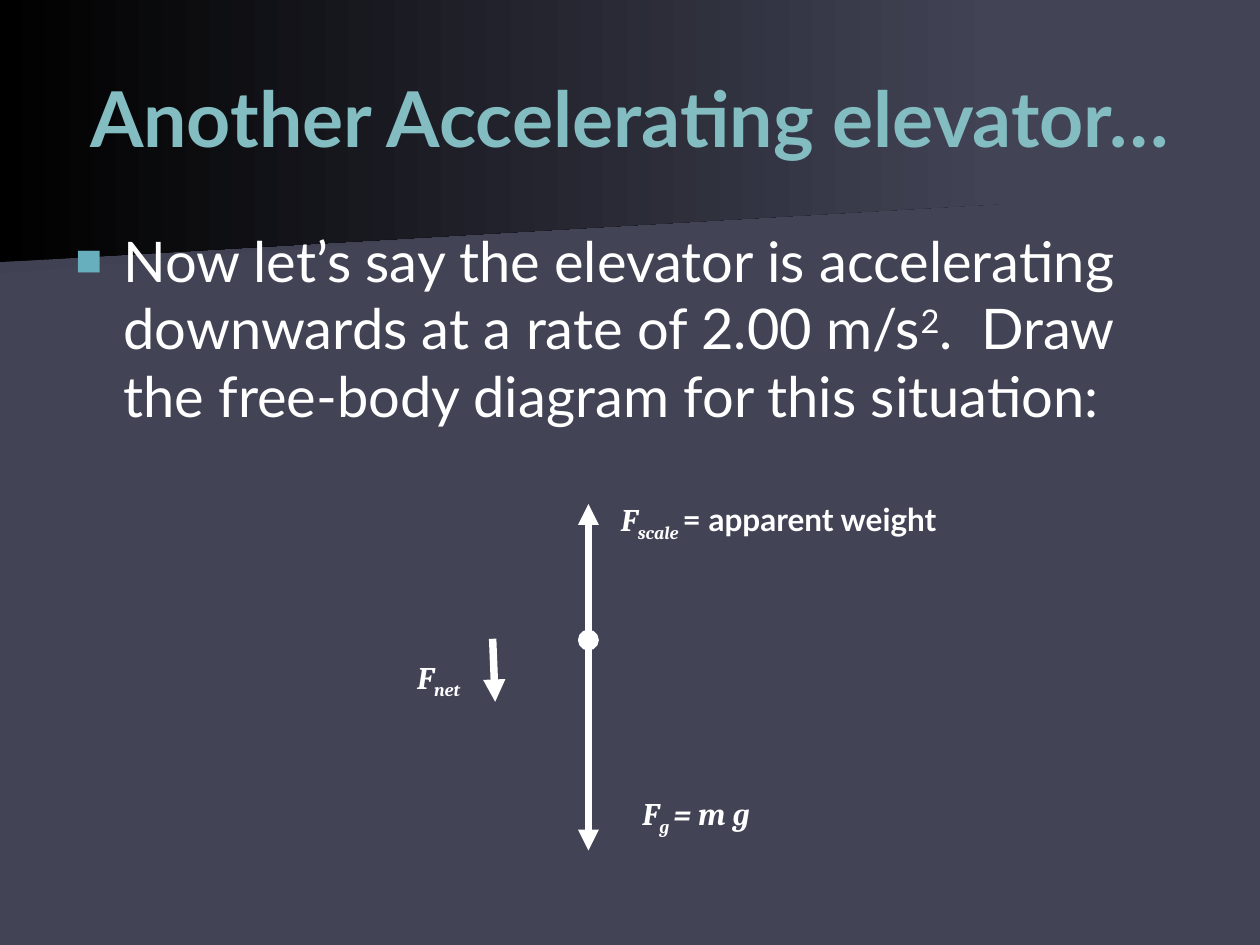
from lxml import etree
from pptx import Presentation
from pptx.dml.color import RGBColor
from pptx.enum.shapes import MSO_CONNECTOR
from pptx.enum.text import MSO_ANCHOR, PP_ALIGN
from pptx.oxml.ns import qn
from pptx.util import Inches, Pt

STRAIGHT = MSO_CONNECTOR.STRAIGHT
TOP, MIDDLE = MSO_ANCHOR.TOP, MSO_ANCHOR.MIDDLE
LEFT, CENTER, RIGHT = PP_ALIGN.LEFT, PP_ALIGN.CENTER, PP_ALIGN.RIGHT

SLATE = RGBColor(0x42, 0x44, 0x56)
DUSK = RGBColor(0x40, 0x42, 0x54)
BLACK = RGBColor(0, 0, 0)
WHITE = RGBColor(0xFF, 0xFF, 0xFF)
TEAL = RGBColor(0x83, 0xBC, 0xC1)
SANS, SERIF = "Lato", "Cambria"

deck = Presentation()
deck.slide_width, deck.slide_height = Inches(10), Inches(7.5)
slide = deck.slides.add_slide(deck.slide_layouts[6])
slide.background.fill.solid()
slide.background.fill.fore_color.rgb = SLATE
shapes = slide.shapes


def add_text(box, runs, size, color=WHITE, bold=True, align=LEFT, anchor=TOP):
    """Each run is (text, font, italic, baseline shift in percent)."""
    frame = shapes.add_textbox(*[Inches(v) for v in box]).text_frame
    frame.word_wrap = True
    frame.vertical_anchor = anchor
    para = frame.paragraphs[0]
    para.alignment = align
    for text, face, italic, shift in runs:
        run = para.add_run()
        run.text = text
        font = run.font
        font.name, font.size = face, Pt(size)
        font.bold, font.italic = bold, italic
        font.color.rgb = color
        if shift:
            run._r.get_or_add_rPr().set("baseline", str(shift * 1000))
    return para


def add_arrow(start, end, width, **ends):
    """Keywords headEnd and tailEnd give the marks at start and end."""
    arrow = shapes.add_connector(STRAIGHT, *[Inches(v) for v in start + end])
    arrow.line.color.rgb = WHITE
    arrow.line.width = Pt(width)
    props = arrow.element.spPr
    for tag, kind in ends.items():
        etree.SubElement(props.find(qn("a:ln")), qn("a:" + tag), type=kind)
    etree.SubElement(props, qn("a:effectLst"))


# Shaded bands behind the title
bands = [
    ([(7.78, 1.53), (0, 2.17), (0, 1.01), (7.79, 1.01), (7.78, 1.28)], DUSK),
    ([(7.92, 1.62), (0, 2.08), (0, 0), (7.92, 0)], BLACK),
]
for points, color in bands:
    start, *rest = [(Inches(x), Inches(y)) for x, y in points]
    pen = shapes.build_freeform(*start)
    pen.add_line_segments(rest, close=True)
    band = pen.convert_to_shape()
    band.shadow.inherit = False
    band.line.fill.background()
    band.fill.gradient()
    band.fill.gradient_angle = 0
    for stop, shade in zip(band.fill.gradient_stops, (color, SLATE)):
        stop.color.rgb = shade

# Title and bullet
add_text((0, 0.3, 10, 1.25), [("Another Accelerating elevator…", SANS, False, 0)],
         44, TEAL, align=CENTER, anchor=MIDDLE)
bullet = add_text((0.5, 1.75, 9, 4.92), [
    ("Now let’s say the elevator is accelerating downwards at a rate of 2.00 m/s",
     SANS, False, 0),
    ("2", SANS, False, 30),
    (".  Draw the free-body diagram for this situation:", SANS, False, 0),
], 32, bold=False)
props = bullet._p.get_or_add_pPr()
props.set("marL", str(Inches(0.38)))
props.set("indent", str(-Inches(0.38)))
tint = etree.SubElement(props, qn("a:buClr"))
etree.SubElement(tint, qn("a:srgbClr"), val="67AFBD")
etree.SubElement(props, qn("a:buSzPct"), val="80000")
etree.SubElement(props, qn("a:buFont"), typeface="Arial")
etree.SubElement(props, qn("a:buChar"), char="■")

# Free-body diagram
add_arrow((4.67, 5.08), (4.67, 6.75), 4, headEnd="oval", tailEnd="triangle")
add_arrow((4.67, 4), (4.67, 5.08), 4, headEnd="triangle")
add_arrow((3.91, 5.07), (3.93, 5.57), 4.25, tailEnd="triangle")

labels = [
    ((4.83, 3.92, 3.33, 0.4), "scale ", [("= apparent weight", SANS, False, 0)], LEFT),
    ((5, 6.25, 1.42, 0.4), "g ", [("= m g", SERIF, True, 0)], LEFT),
    ((2.58, 5.17, 1.17, 0.4), "net", [], RIGHT),
]
for box, sub, tail, align in labels:
    force = [("F", SERIF, True, 0), (sub, SERIF, True, -25)]
    add_text(box, force + tail, 18, align=align)

deck.save("out.pptx")
